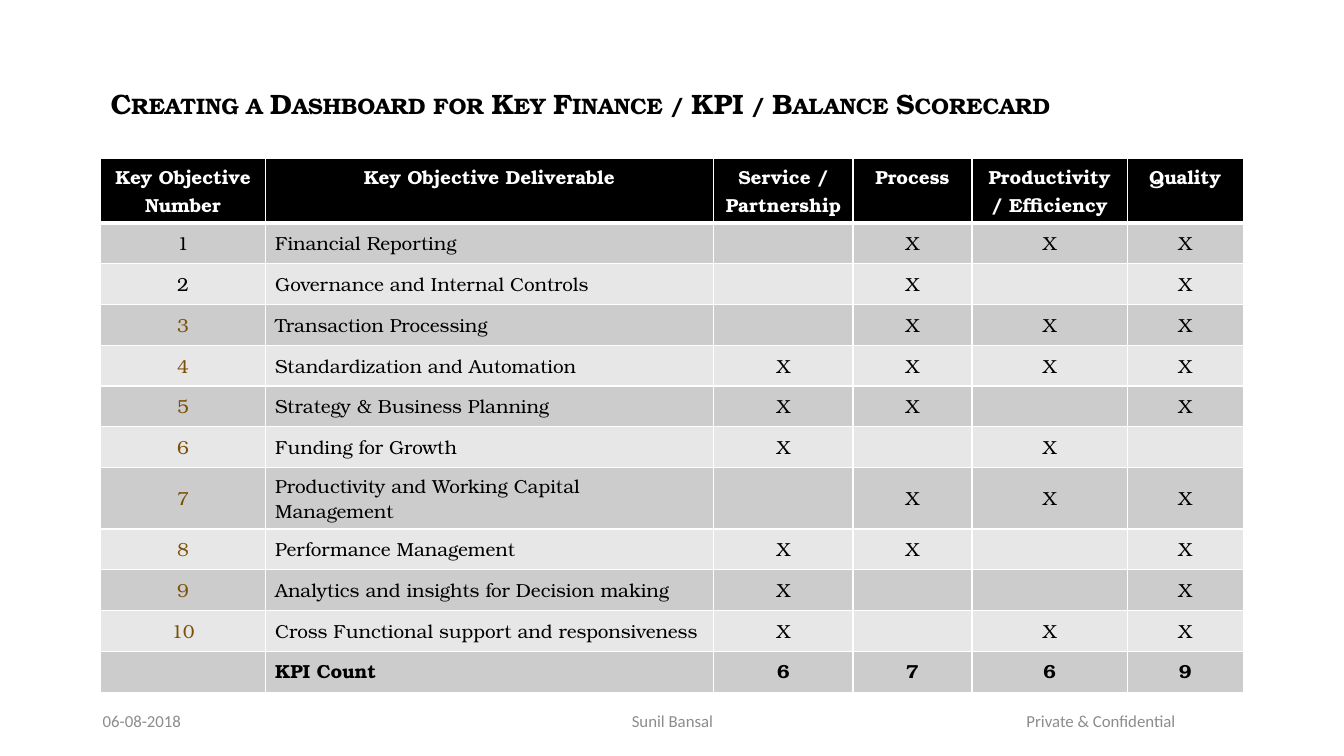
from lxml.etree import SubElement
from pptx import Presentation
from pptx.dml.color import RGBColor
from pptx.enum.text import MSO_ANCHOR, PP_ALIGN
from pptx.oxml.ns import qn
from pptx.util import Inches, Pt

# Content
TITLE = "Creating a Dashboard for Key Finance / KPI / Balance Scorecard"
HEADERS = ["Key Objective Number", "Key Objective Deliverable", "Service / Partnership",
           "Process", "Productivity / Efficiency", "Quality"]
# Deliverable, then one mark per category
OBJECTIVES = [
    ("Financial Reporting", ["", "X", "X", "X"]),
    ("Governance and Internal Controls", ["", "X", "", "X"]),
    ("Transaction Processing", ["", "X", "X", "X"]),
    ("Standardization and Automation", ["X", "X", "X", "X"]),
    ("Strategy & Business Planning", ["X", "X", "", "X"]),
    ("Funding for Growth", ["X", "", "X", ""]),
    ("Productivity and Working Capital Management", ["", "X", "X", "X"]),
    ("Performance Management", ["X", "X", "", "X"]),
    ("Analytics and insights for Decision making", ["X", "", "", "X"]),
    ("Cross Functional support and responsiveness", ["X", "", "X", "X"]),
]
# Text, left, width, alignment
FOOTERS = [
    ("06-08-2018", 0.92, 3, PP_ALIGN.LEFT),
    ("Sunil Bansal", 4.42, 4.5, PP_ALIGN.CENTER),
    ("Private & Confidential", 9.42, 3, PP_ALIGN.CENTER),
]

# Style
COLORS = {"black": "000000", "white": "FFFFFF", "brown": "7D5008", "gray": "8C8C8C",
          "odd": "CCCCCC", "even": "E7E7E7"}
TITLE_FONT = {"name": "TeX Gyre Bonum", "size": Pt(20), "bold": True}
TABLE_FONT = {"name": "TeX Gyre Bonum", "size": Pt(13.5)}
FOOTER_FONT = {"name": "Calibri", "size": Pt(12)}
COL_WIDTHS = [1.63, 4.45, 1.38, 1.18, 1.54, 1.15]
TABLE_LEFT, TABLE_TOP, TABLE_HEIGHT = 1, 1.57, 5.3
TALL_ROWS = {0: 0.64, 7: 0.61}  # rows with two lines of text


def rgb(name):
    return RGBColor.from_string(COLORS[name])


def write(p, text, font, color, align):
    p.alignment = align
    r = p.add_run()
    r.text = text
    for key, value in font.items():
        setattr(r.font, key, value)
    r.font.color.rgb = rgb(color)
    return r


def add_text(s, box, text, font, color, align, spacing=1.0):
    tf = s.shapes.add_textbox(*map(Inches, box)).text_frame
    tf.word_wrap = True
    tf.vertical_anchor = MSO_ANCHOR.MIDDLE
    p = tf.paragraphs[0]
    p.line_spacing = spacing
    return write(p, text, font, color, align)


def add_borders(cell, bottom):
    tc_pr = cell._tc.get_or_add_tcPr()
    for side, width in {"L": 1, "R": 1, "T": 1, "B": bottom}.items():
        ln = SubElement(tc_pr, qn(f"a:ln{side}"), w=str(Pt(width)))
        SubElement(SubElement(ln, qn("a:solidFill")), qn("a:srgbClr"), val=COLORS["white"])


prs = Presentation()
prs.slide_width, prs.slide_height = Inches(13.33), Inches(7.5)
s = prs.slides.add_slide(prs.slide_layouts[6])

# Title in small capitals
r = add_text(s, (1, 0.7, 11.33, 0.7), TITLE, TITLE_FONT, "black", PP_ALIGN.LEFT, 0.9)
r.font._element.set("cap", "small")

# Rows: header, numbered objectives, count of marks per category
rows = [HEADERS]
rows += [[str(n), name, *marks] for n, (name, marks) in enumerate(OBJECTIVES, 1)]
counts = [str(column.count("X")) for column in zip(*(marks for _, marks in OBJECTIVES))]
rows.append(["", "KPI Count", *counts])
last = len(rows) - 1

# Scorecard table: single-line rows share the height left by the tall ones
table = s.shapes.add_table(len(rows), len(HEADERS), Inches(TABLE_LEFT), Inches(TABLE_TOP),
                           Inches(sum(COL_WIDTHS)), Inches(TABLE_HEIGHT)).table
for column, width in zip(table.columns, COL_WIDTHS):
    column.width = Inches(width)
row_height = (TABLE_HEIGHT - sum(TALL_ROWS.values())) / (len(rows) - len(TALL_ROWS))
for i, row in enumerate(rows):
    table.rows[i].height = Inches(TALL_ROWS.get(i, row_height))
    header = i == 0
    fill = "black" if header else "odd" if i % 2 else "even"
    for j, text in enumerate(row):
        cell = table.cell(i, j)
        add_borders(cell, 3 if header else 1)
        cell.fill.solid()
        cell.fill.fore_color.rgb = rgb(fill)
        if not text:
            continue
        color = "white" if header else "brown" if j == 0 and i > 2 else "black"
        align = PP_ALIGN.LEFT if j == 1 and not header else PP_ALIGN.CENTER
        font = {**TABLE_FONT, "bold": i in (0, last)}
        cell.vertical_anchor = MSO_ANCHOR.TOP if i in (0, last) else MSO_ANCHOR.MIDDLE
        write(cell.text_frame.paragraphs[0], text, font, color, align)

# Footer
for text, left, width, align in FOOTERS:
    add_text(s, (left, 6.95, width, 0.4), text, FOOTER_FONT, "gray", align)

prs.save("out.pptx")
